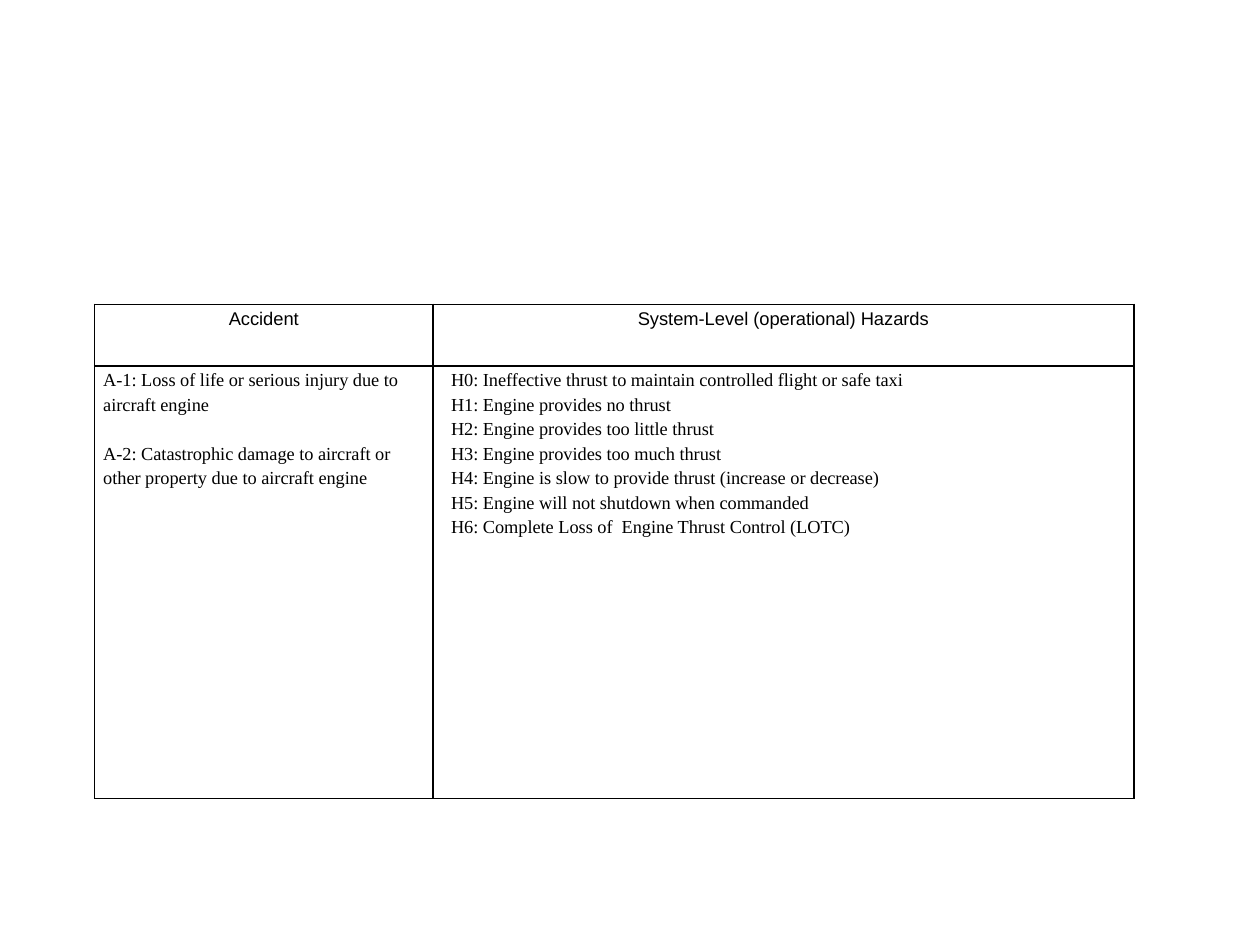
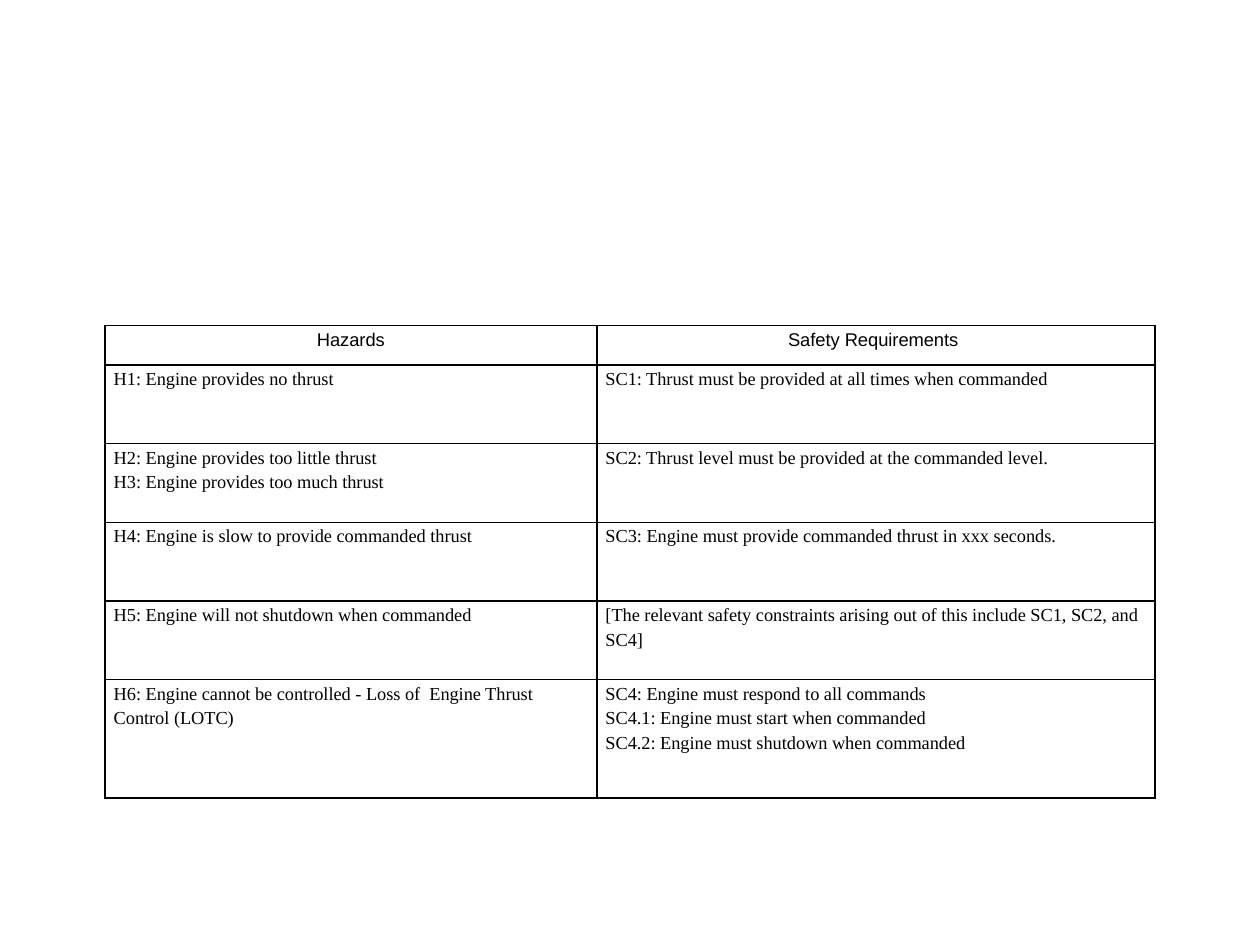
from lxml.etree import SubElement
from pptx import Presentation
from pptx.dml.color import RGBColor
from pptx.enum.text import MSO_ANCHOR, PP_ALIGN
from pptx.oxml.ns import qn
from pptx.util import Pt

BLACK = RGBColor(0x00, 0x00, 0x00)
WHITE = RGBColor(0xFF, 0xFF, 0xFF)
HEADER_FONT = "Arial"
BODY_FONT = "Times New Roman"
TEXT_SIZE = 10.5
LINE_PITCH = 14
SIDE_MARGIN = 5
BORDER_WIDTH = 1

# Each cell is a list of paragraphs; the first row holds the headings.
ACCIDENTS = {
    "left": 54, "top": 174,
    "column_widths": [193.5, 400.5],
    "row_heights": [35.25, 247],
    "column_formats": [
        {"space_between": LINE_PITCH},
        {"align": PP_ALIGN.JUSTIFY, "indent": 5.25},
    ],
    "rows": [
        (["Accident"], ["System-Level (operational) Hazards"]),
        (
            [
                "A-1: Loss of life or serious injury due to aircraft engine",
                "A-2: Catastrophic damage to aircraft or other property due to aircraft engine",
            ],
            [
                "H0: Ineffective thrust to maintain controlled flight or safe taxi",
                "H1: Engine provides no thrust",
                "H2: Engine provides too little thrust",
                "H3: Engine provides too much thrust",
                "H4: Engine is slow to provide thrust (increase or decrease)",
                "H5: Engine will not shutdown when commanded",
                "H6: Complete Loss of  Engine Thrust Control (LOTC)",
            ],
        ),
    ],
}

REQUIREMENTS = {
    "left": 60, "top": 186,
    "column_widths": [281, 319],
    "row_heights": [22.5] + [45] * 4 + [67.5],
    "column_formats": [{}, {}],
    "rows": [
        (["Hazards"], ["Safety Requirements "]),
        (
            ["H1: Engine provides no thrust"],
            ["SC1: Thrust must be provided at all times when commanded"],
        ),
        (
            ["H2: Engine provides too little thrust", "H3: Engine provides too much thrust"],
            ["SC2: Thrust level must be provided at the commanded level."],
        ),
        (
            ["H4: Engine is slow to provide commanded thrust"],
            ["SC3: Engine must provide commanded thrust in xxx seconds."],
        ),
        (
            ["H5: Engine will not shutdown when commanded"],
            ["[The relevant safety constraints arising out of this include SC1, SC2, and SC4]"],
        ),
        (
            ["H6: Engine cannot be controlled - Loss of  Engine Thrust Control (LOTC)"],
            [
                "SC4: Engine must respond to all commands",
                "SC4.1: Engine must start when commanded",
                "SC4.2: Engine must shutdown when commanded",
            ],
        ),
    ],
}


def write_text(text_frame, lines, font=BODY_FONT, align=PP_ALIGN.LEFT, indent=0, space_between=0):
    for index, line in enumerate(lines):
        paragraph = text_frame.add_paragraph() if index else text_frame.paragraphs[0]
        paragraph.alignment = align
        paragraph.line_spacing = Pt(LINE_PITCH)
        if index and space_between:
            paragraph.space_before = Pt(space_between)
        if indent:
            paragraph._p.get_or_add_pPr().set("marL", str(Pt(indent)))
        run = paragraph.add_run()
        run.text = line
        run.font.name = font
        run.font.size = Pt(TEXT_SIZE)
        run.font.bold = False
        run.font.color.rgb = BLACK


def style_cell(cell):
    cell.margin_left = cell.margin_right = Pt(SIDE_MARGIN)
    cell.margin_top = cell.margin_bottom = 0
    cell.vertical_anchor = MSO_ANCHOR.TOP
    properties = cell._tc.get_or_add_tcPr()
    for side in ("lnL", "lnR", "lnT", "lnB"):
        border = SubElement(properties, qn(f"a:{side}"), w=str(Pt(BORDER_WIDTH)))
        line_fill = SubElement(border, qn("a:solidFill"))
        SubElement(line_fill, qn("a:srgbClr"), val=str(BLACK))
    cell.fill.solid()
    cell.fill.fore_color.rgb = WHITE


def add_text_table(slide, content):
    widths, heights, rows = content["column_widths"], content["row_heights"], content["rows"]
    table = slide.shapes.add_table(
        len(rows), len(widths), Pt(content["left"]), Pt(content["top"]),
        Pt(sum(widths)), Pt(sum(heights)),
    ).table
    table.first_row = table.horz_banding = False
    for column, width in zip(table.columns, widths):
        column.width = Pt(width)
    for row, height in zip(table.rows, heights):
        row.height = Pt(height)
    for row_index, row in enumerate(rows):
        for column_index, lines in enumerate(row):
            cell = table.cell(row_index, column_index)
            style_cell(cell)
            if row_index == 0:
                write_text(cell.text_frame, lines, font=HEADER_FONT, align=PP_ALIGN.CENTER)
            else:
                write_text(cell.text_frame, lines, **content["column_formats"][column_index])


def main():
    presentation = Presentation()
    presentation.slide_width, presentation.slide_height = Pt(720), Pt(540)
    for content in (ACCIDENTS, REQUIREMENTS):
        slide = presentation.slides.add_slide(presentation.slide_layouts[6])
        add_text_table(slide, content)
    presentation.save("out.pptx")


if __name__ == "__main__":
    main()
